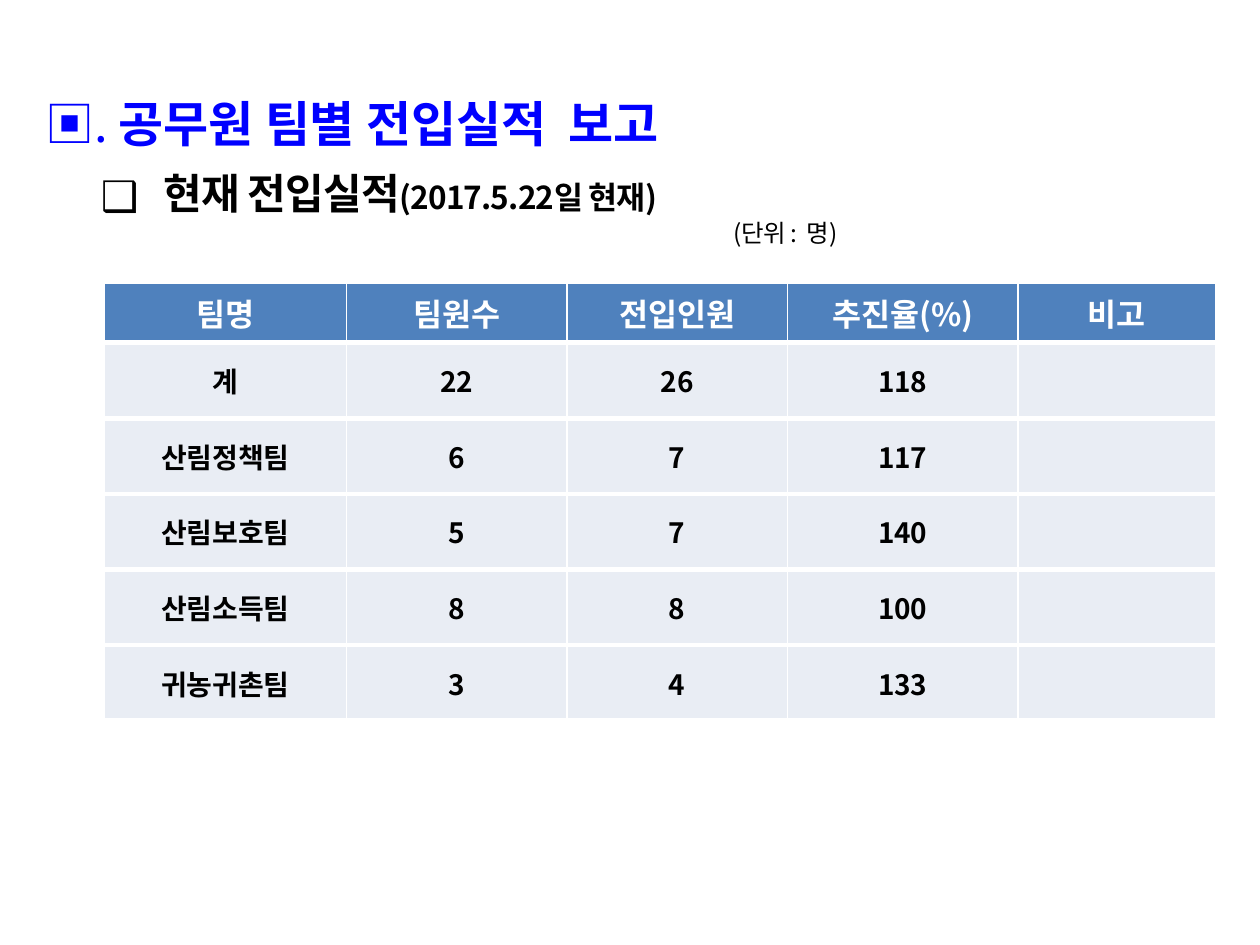
from lxml import etree
from pptx import Presentation
from pptx.dml.color import RGBColor
from pptx.enum.text import MSO_ANCHOR, MSO_AUTO_SIZE, PP_ALIGN
from pptx.oxml.ns import qn
from pptx.util import Inches, Pt

FONT = "Noto Sans CJK KR"
COLORS = {"title": "0000FF", "text": "000000", "white": "FFFFFF",
          "header": "4F81BD", "row": "E9EDF4"}

# Runs: text, size, bold, letter spacing in points
TITLE = [("▣. ", 28, False, 0), ("공무원 팀별 전입실적  보고", 28, True, 0)]
SUBTITLE = [("현재 전입실적", 24, True, -0.5), ("(2017.5.22일 현재)", 18, True, -0.5)]
UNIT = [("(단위 :  명)", 14, False, -0.5)]

HEADERS = ["팀명", "팀원수", "전입인원", "추진율(%)", "비고"]
ROWS = [
    ["계", "22", "26", "118", ""],
    ["산림정책팀", "6", "7", "117", ""],
    ["산림보호팀", "5", "7", "140", ""],
    ["산림소득팀", "8", "8", "100", ""],
    ["귀농귀촌팀", "3", "4", "133", ""],
]
COL_WIDTHS = [1.92, 1.75, 1.75, 1.83, 1.57]
HEADER_HEIGHT, ROW_HEIGHT = 0.47, 0.6


def rgb(name):
    return RGBColor.from_string(COLORS[name])


def add_run(p, text, size, bold, color, spacing=0):
    r = p.add_run()
    r.text = text
    r.font.size, r.font.bold, r.font.name = Pt(size), bold, FONT
    r.font.color.rgb = rgb(color)
    rPr = r._r.get_or_add_rPr()
    if spacing:
        rPr.set("spc", str(int(spacing * 100)))
    etree.SubElement(rPr, qn("a:ea"), typeface=FONT)


def place(sp, left, top, width, height):
    sp.left, sp.top, sp.width, sp.height = map(Inches, (left, top, width, height))
    tf = sp.text_frame
    tf.word_wrap, tf.auto_size = True, MSO_AUTO_SIZE.NONE
    tf.vertical_anchor = MSO_ANCHOR.TOP
    return tf


def fill_paragraph(p, runs, color, margin, indent, bullet=None):
    """Write runs with a hanging indent in inches and an optional bullet."""
    p.alignment = PP_ALIGN.LEFT
    p.space_before, p.line_spacing = Pt(0), 1.0
    pPr = p._p.get_or_add_pPr()
    pPr.set("marL", str(Inches(margin)))
    pPr.set("indent", str(Inches(indent)))
    if bullet:
        clr = etree.SubElement(pPr, qn("a:buClr"))
        etree.SubElement(clr, qn("a:srgbClr"), val=COLORS[color])
        etree.SubElement(pPr, qn("a:buFont"), typeface=FONT)
        etree.SubElement(pPr, qn("a:buChar"), char=bullet)
    else:
        etree.SubElement(pPr, qn("a:buNone"))
    for text, size, bold, spacing in runs:
        add_run(p, text, size, bold, color, spacing)


def style_cell(cell, text, size, text_color, fill, top_width):
    cell.vertical_anchor = MSO_ANCHOR.MIDDLE
    p = cell.text_frame.paragraphs[0]
    p.alignment = PP_ALIGN.CENTER
    if text:
        add_run(p, text, size, True, text_color)
    tcPr = cell._tc.get_or_add_tcPr()
    for side, width in (("L", 1), ("R", 1), ("T", top_width), ("B", 3)):
        ln = etree.SubElement(tcPr, qn(f"a:ln{side}"), w=str(Pt(width)))
        solid = etree.SubElement(ln, qn("a:solidFill"))
        etree.SubElement(solid, qn("a:srgbClr"), val=COLORS["white"])
    cell.fill.solid()
    cell.fill.fore_color.rgb = rgb(fill)


prs = Presentation()
prs.slide_width, prs.slide_height = Inches(10), Inches(7.5)
s = prs.slides.add_slide(prs.slide_layouts[1])

tf = place(s.shapes.title, 0.2, 0.69, 9.8, 0.6)
fill_paragraph(tf.paragraphs[0], TITLE, "title", 0.56, -0.5)

tf = place(s.placeholders[1], 0.2, 1.28, 9.8, 0.9)
fill_paragraph(tf.paragraphs[0], SUBTITLE, "text", 1, -0.5, "❑")
fill_paragraph(tf.add_paragraph(), UNIT, "text", 5.52, 0)

heights = [HEADER_HEIGHT] + [ROW_HEIGHT] * len(ROWS)
table = s.shapes.add_table(len(heights), len(HEADERS), Inches(0.83), Inches(2.25),
                           Inches(sum(COL_WIDTHS)), Inches(sum(heights))).table
for col, width in zip(table.columns, COL_WIDTHS):
    col.width = Inches(width)
for i, (height, texts) in enumerate(zip(heights, [HEADERS] + ROWS)):
    table.rows[i].height = Inches(height)
    look = (16, "text", "row", 3) if i else (18, "white", "header", 1)
    for j, text in enumerate(texts):
        style_cell(table.cell(i, j), text, *look)

prs.save("out.pptx")
